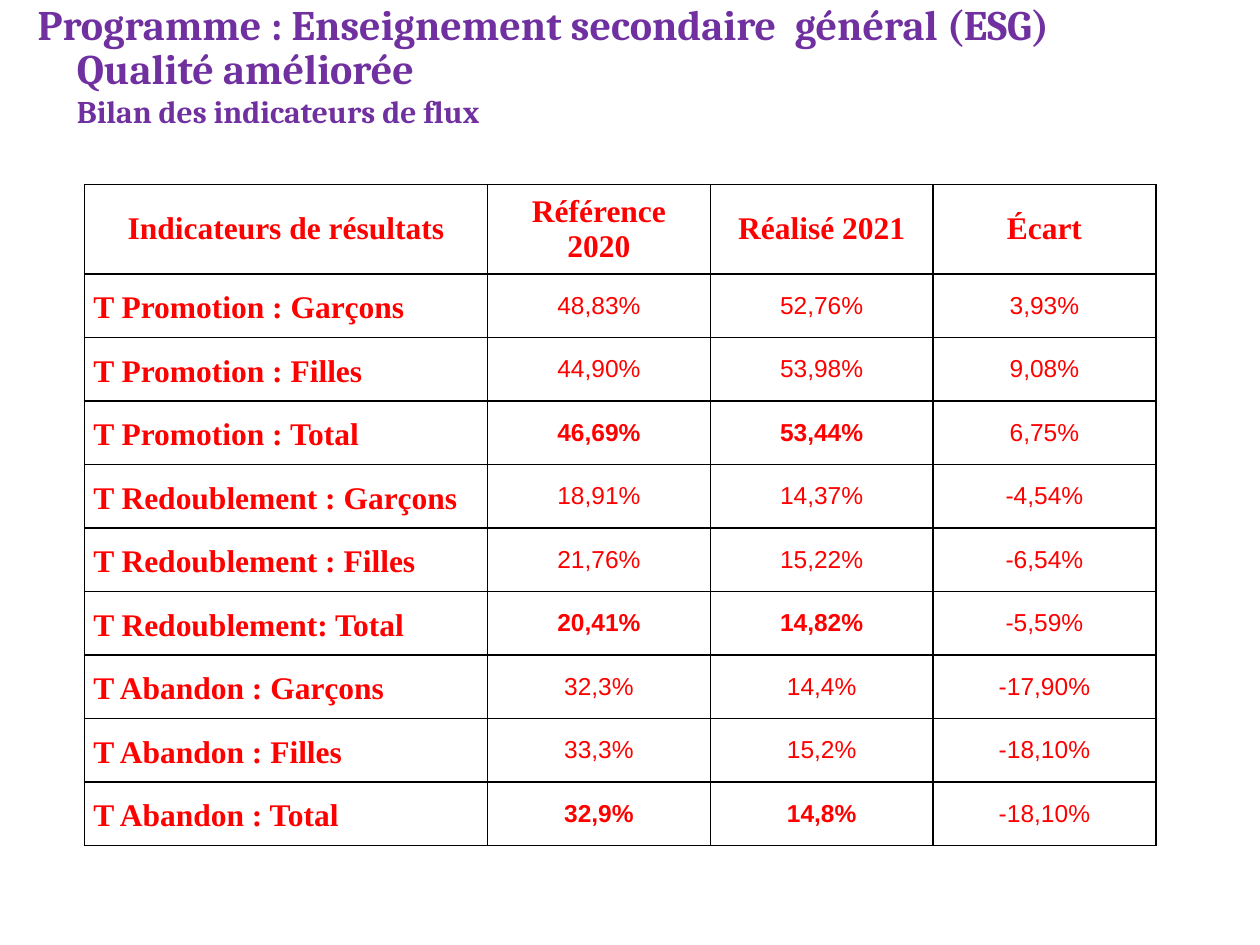
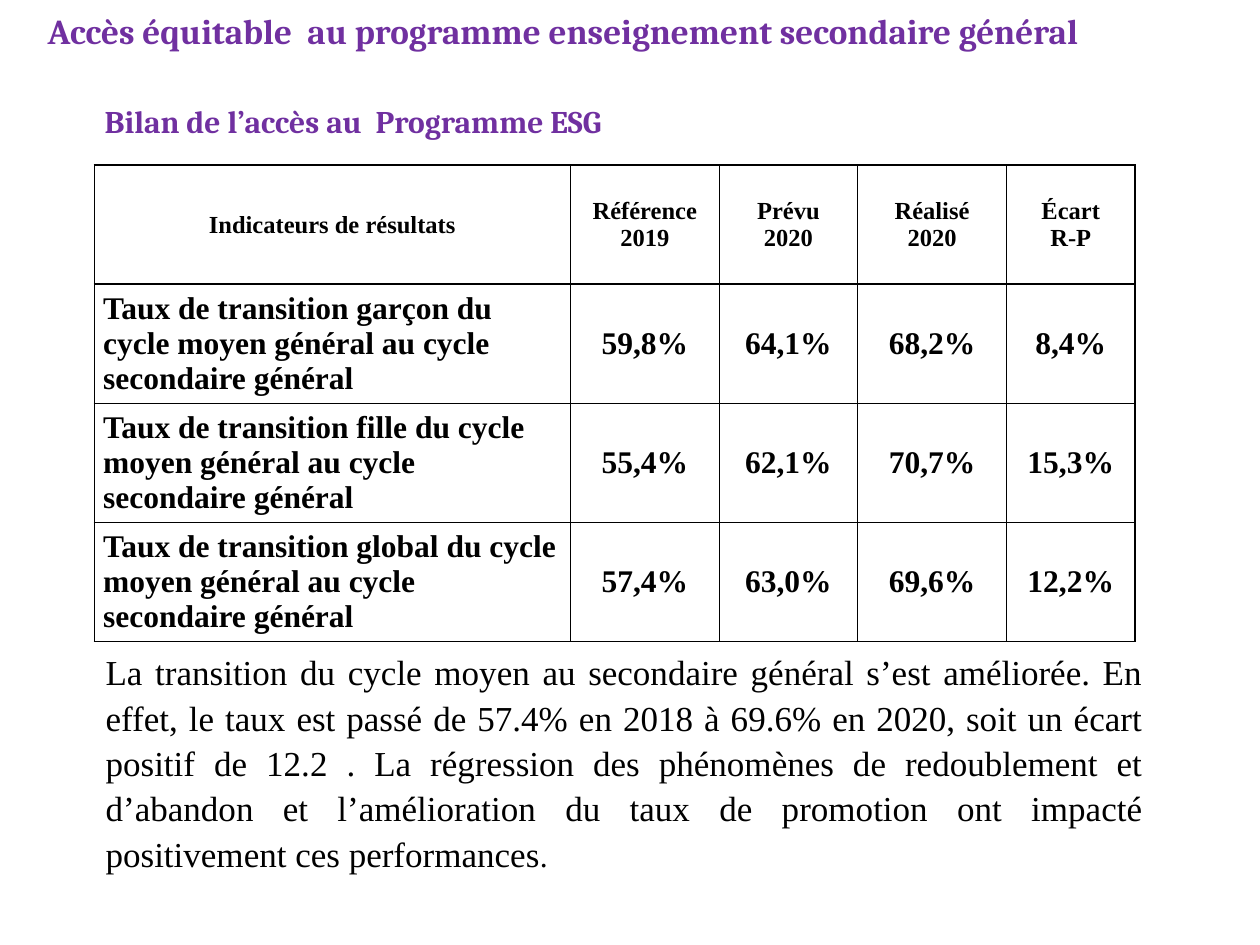
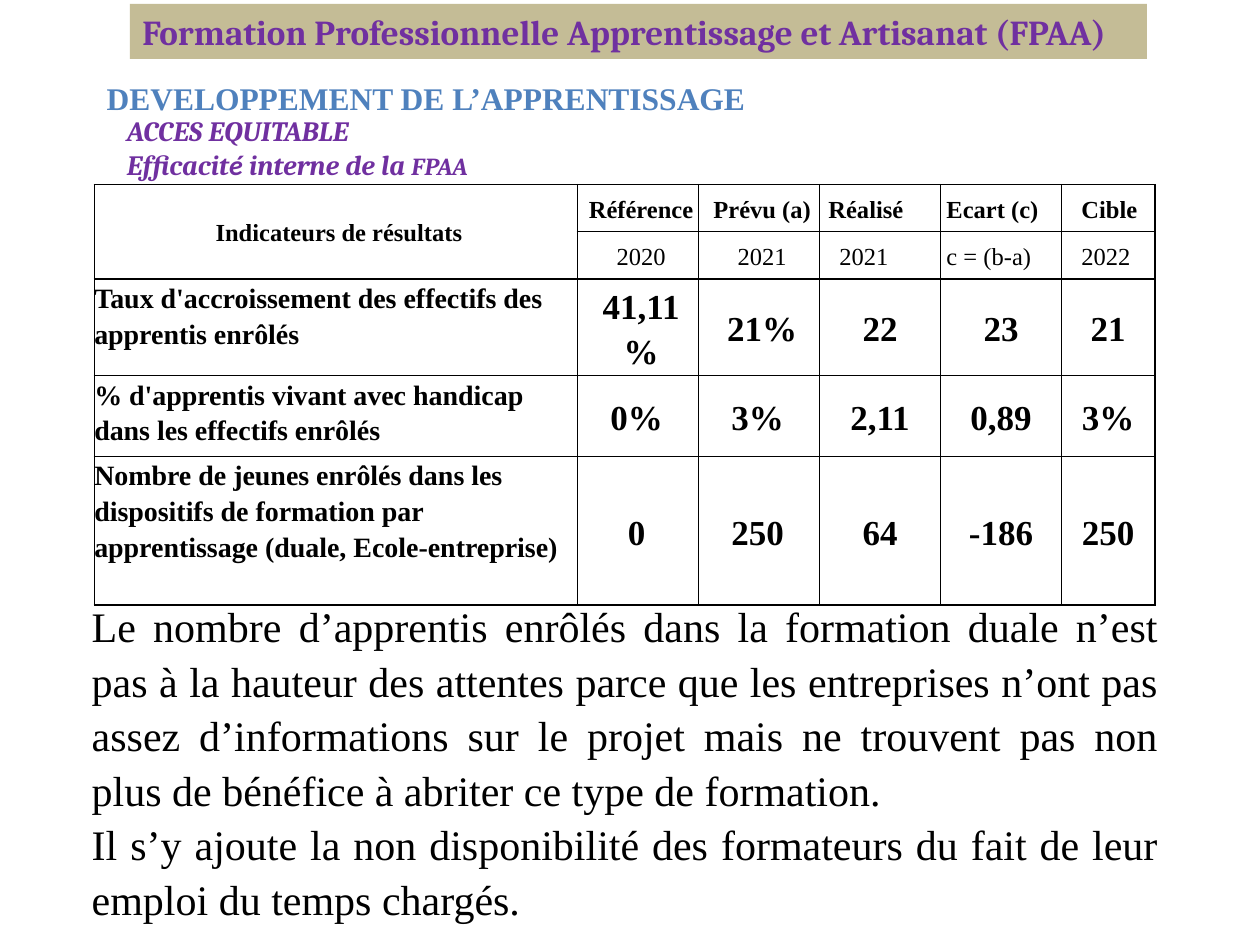
"""Build three slides of education indicators, each with headings and a results table."""
from lxml import etree
from pptx import Presentation
from pptx.dml.color import RGBColor
from pptx.enum import shapes, text
from pptx.oxml import ns
from pptx.util import Cm, Pt

COLOURS = {"title": "7030A0", "alert": "FF0000", "ink": "000000",
           "paper": "FFFFFF", "band": "C4BC96", "section": "4F81BD"}
LEFT, CENTER, JUSTIFY = text.PP_ALIGN.LEFT, text.PP_ALIGN.CENTER, text.PP_ALIGN.JUSTIFY
TOP, MIDDLE = text.MSO_ANCHOR.TOP, text.MSO_ANCHOR.MIDDLE

TITLE = dict(font="Cambria", colour="title", bold=True)
HEADING = dict(TITLE, size=18)
BODY = dict(align=JUSTIFY, spacing=1.08)
CELL = dict(anchor=MIDDLE, align=CENTER, bold=True, margins=(0.18, 0, 0.18, 0))
FPAA_CELL = dict(CELL, spacing=1.15, margins=(0, 0, 0.05, 0))

FLOW = {
    "headings": [
        ("Programme : Enseignement secondaire  général (ESG)", (0.51, -0.15, 23.5, 1.27), dict(TITLE, size=24)),
        ("Qualité améliorée", (1.3, 0.74, 8.4, 1.27), dict(TITLE, size=24)),
        ("Bilan des indicateurs de flux", (1.3, 1.73, 8.8, 1.02), dict(HEADING, anchor=MIDDLE)),
    ],
    "table": {
        "at": (1.7, 3.72),
        "widths": [8.13] + [4.49] * 3,
        "heights": [1.8] + [1.28] * 9,
        "head": dict(CELL, size=18, colour="alert"),
        "label": dict(CELL, size=18, colour="alert", align=LEFT, spacing=1.15, after=10),
        "value": dict(CELL, size=14, colour="alert", font="Arial", bold=False),
        "rows": [
            ["Indicateurs de résultats", "Référence 2020", "Réalisé 2021", "Écart"],
            ["T Promotion : Garçons", "48,83%", "52,76%", "3,93%"],
            ["T Promotion : Filles", "44,90%", "53,98%", "9,08%"],
            ["T Promotion : Total", ("46,69%", dict(bold=True)), ("53,44%", dict(bold=True)), "6,75%"],
            ["T Redoublement : Garçons", "18,91%", "14,37%", "-4,54%"],
            ["T Redoublement : Filles", "21,76%", "15,22%", "-6,54%"],
            ["T Redoublement: Total", ("20,41%", dict(bold=True)), ("14,82%", dict(bold=True)), "-5,59%"],
            ["T Abandon : Garçons", "32,3%", "14,4%", "-17,90%"],
            ["T Abandon : Filles", "33,3%", "15,2%", "-18,10%"],
            ["T Abandon : Total", ("32,9%", dict(bold=True)), ("14,8%", dict(bold=True)), "-18,10%"],
        ],
    },
}

ACCESS = {
    "headings": [
        ("Accès équitable  au programme enseignement secondaire général", (0.71, 0.05, 24.4, 1.12),
         dict(TITLE, size=20, anchor=MIDDLE)),
        ("Bilan de l’accès au  Programme ESG", (1.86, 1.93, 12, 1.02), HEADING),
        ([[("La transition du cycle moyen au secondaire général s’est améliorée. En effet, le taux est passé "
            "de 57.4% en 2018 à 69.6% en 2020, soit un écart positif de 12.2 . La régression des phénomènes "
            "de redoublement et d’abandon et l’amélioration du taux de promotion ont impacté positivement "
            "ces performances", {}), (".", dict(size=18))]],
         (1.88, 12.93, 21.41, 4.52), dict(BODY, size=20)),
    ],
    "table": {
        "at": (1.9, 3.33),
        "widths": [9.6, 3, 2.79, 3, 2.59],
        "heights": [2.4] * 4,
        "head": dict(CELL, size=14),
        "label": dict(CELL, size=18, align=LEFT),
        "value": dict(CELL, size=18),
        "rows": [
            ["Indicateurs de résultats", "Référence 2019", ["Prévu", "2020"], ["Réalisé", "2020"], ["Écart", "R-P"]],
            ["Taux de transition garçon du cycle moyen général au cycle secondaire général",
             "59,8%", "64,1%", "68,2%", "8,4%"],
            ["Taux de transition fille du cycle moyen général au cycle secondaire général",
             "55,4%", "62,1%", "70,7%", "15,3%"],
            ["Taux de transition global du cycle moyen général au cycle secondaire général",
             "57,4%", "63,0%", "69,6%", "12,2%"],
        ],
    },
}

APPRENTICES = {
    "headings": [
        ("Formation Professionnelle Apprentissage et Artisanat (FPAA)", (2.62, 0.08, 20.5, 1.11),
         dict(TITLE, size=20, anchor=MIDDLE, band="band", wrap=False)),
        (["ACCES EQUITABLE",
          [("Efficacit", {}), ("é", dict(font="Calibri")), (" interne de la ", {}), ("FPAA", dict(size=14))]],
         (2.31, 2.16, 10.08, 1.62), dict(TITLE, size=16, italic=True, anchor=MIDDLE)),
        ("DEVELOPPEMENT DE L’APPRENTISSAGE", (1.9, 1.35, 13.8, 1.07),
         dict(size=18, colour="section", bold=True, spacing=1.15)),
        (["Le nombre d’apprentis enrôlés dans la formation duale n’est pas à la hauteur des attentes parce que "
          "les entreprises n’ont pas assez d’informations sur le projet mais ne trouvent pas non plus de "
          "bénéfice à abriter ce type de formation.",
          "Il s’y ajoute la non disponibilité des formateurs du fait de leur emploi du temps chargés."],
         (1.6, 11.91, 22, 6.4), dict(BODY, size=24)),
    ],
    "table": {
        "at": (1.9, 3.72),
        "widths": [9.74] + [2.44] * 4 + [1.88],
        "heights": [0.95, 0.95, 1.65, 1.63, 3],
        "merge": ((0, 0), (1, 0)),
        "head": dict(FPAA_CELL, size=14, indent=0.18),
        "label": dict(FPAA_CELL, size=16, align=LEFT, anchor=TOP),
        "value": dict(FPAA_CELL, size=20, indent=0.05),
        "rows": [
            ["Indicateurs de résultats", "Référence", "Prévu (a)", ("Réalisé", dict(align=LEFT)),
             ("Ecart (c)", dict(align=LEFT, indent=0.12)), ("Cible", dict(align=LEFT, indent=0.4))],
            [None, ("2020", dict(bold=False)), ("2021", dict(bold=False)),
             ("2021", dict(bold=False, align=LEFT, indent=0.4)),
             ("c = (b-a)", dict(bold=False, align=LEFT, indent=0.12)),
             ("2022", dict(bold=False, align=LEFT, indent=0.4))],
            ["Taux d'accroissement des effectifs des apprentis enrôlés",
             ("41,11%", dict(indent=0.18)), ("21%", dict(indent=0.18)), "22", "23", "21"],
            ["% d'apprentis vivant avec handicap dans les effectifs enrôlés",
             ("0%", dict(indent=0)), ("3%", dict(indent=0)), "2,11", "0,89", "3%"],
            ["Nombre de jeunes enrôlés dans les dispositifs de formation par apprentissage (duale, Ecole-entreprise)",
             ("0", dict(indent=0)), ("250", dict(indent=0)), "64", "-186", ("250", dict(indent=-0.1))],
        ],
    },
}
APPRENTICES["table"]["rows"][-1][-1] = "250"


def write(frame, content, size=18, font="Times New Roman", colour="ink", bold=False, italic=False,
          align=LEFT, spacing=None, after=0, indent=0):
    paragraphs = [content] if isinstance(content, str) else content
    for number, runs in enumerate(paragraphs):
        paragraph = frame.paragraphs[0] if number == 0 else frame.add_paragraph()
        paragraph.alignment = align
        paragraph.space_after = Pt(after)
        if spacing:
            paragraph.line_spacing = spacing
        if indent:
            paragraph._p.get_or_add_pPr().set("marL", str(Cm(indent)))
        for words, change in [(runs, {})] if isinstance(runs, str) else runs:
            run = paragraph.add_run()
            run.text = words
            run.font.size = Pt(change.get("size", size))
            run.font.name = change.get("font", font)
            run.font.bold, run.font.italic = bold, italic
            run.font.color.rgb = RGBColor.from_string(COLOURS[colour])


def add_heading(slide, content, place, look):
    look = dict(look)
    band, anchor, wrap = look.pop("band", None), look.pop("anchor", TOP), look.pop("wrap", True)
    box = [Cm(length) for length in place]
    if band:
        heading = slide.shapes.add_shape(shapes.MSO_SHAPE.RECTANGLE, *box)
        heading.shadow.inherit = False
        heading.fill.solid()
        heading.fill.fore_color.rgb = RGBColor.from_string(COLOURS[band])
        heading.line.fill.background()
    else:
        heading = slide.shapes.add_textbox(*box)
    heading.text_frame.word_wrap = wrap
    heading.text_frame.vertical_anchor = anchor
    write(heading.text_frame, content, **look)


def outline(cell):
    properties = cell._tc.get_or_add_tcPr()
    for side in ("a:lnL", "a:lnR", "a:lnT", "a:lnB"):
        edge = etree.SubElement(properties, ns.qn(side), w=str(Pt(1)))
        paint = etree.SubElement(edge, ns.qn("a:solidFill"))
        etree.SubElement(paint, ns.qn("a:srgbClr"), val=COLOURS["ink"])


def add_results(slide, results):
    rows, widths, heights = results["rows"], results["widths"], results["heights"]
    place = [Cm(length) for length in (*results["at"], sum(widths), sum(heights))]
    table = slide.shapes.add_table(len(rows), len(widths), *place).table
    table.first_row = table.horz_banding = False
    for column, width in zip(table.columns, widths):
        column.width = Cm(width)
    for row, height in zip(table.rows, heights):
        row.height = Cm(height)
    head_rows = 1
    if "merge" in results:
        first, last = results["merge"]
        table.cell(*first).merge(table.cell(*last))
        head_rows = last[0] + 1
    for r, row in enumerate(rows):
        for c, entry in enumerate(row):
            cell = table.cell(r, c)
            outline(cell)
            cell.fill.solid()
            cell.fill.fore_color.rgb = RGBColor.from_string(COLOURS["paper"])
            if entry is None:
                continue
            content, change = entry if isinstance(entry, tuple) else (entry, {})
            part = "head" if r < head_rows else "value" if c else "label"
            look = {**results[part], **change}
            cell.vertical_anchor = look.pop("anchor")
            margins = [Cm(length) for length in look.pop("margins")]
            cell.margin_left, cell.margin_top, cell.margin_right, cell.margin_bottom = margins
            write(cell.text_frame, content, **look)


def main():
    deck = Presentation()
    deck.slide_width, deck.slide_height = Cm(25.4), Cm(19.05)
    for topic in (FLOW, ACCESS, APPRENTICES):
        slide = deck.slides.add_slide(deck.slide_layouts[6])
        add_results(slide, topic["table"])
        for heading in topic["headings"]:
            add_heading(slide, *heading)
    deck.save("out.pptx")


if __name__ == "__main__":
    main()
